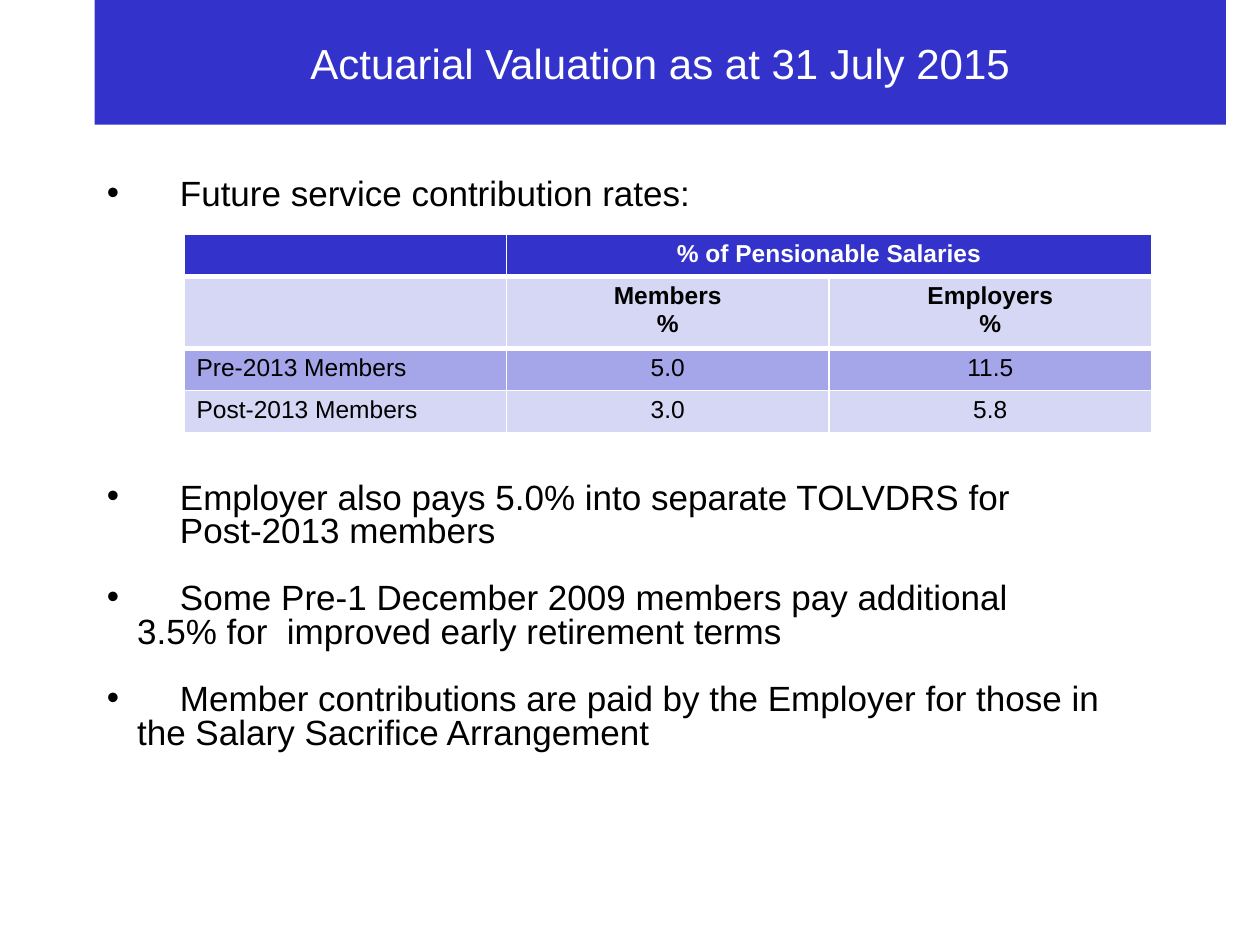
"""Build the actuarial valuation slide with its contribution rate table."""
from lxml.etree import SubElement
from pptx import Presentation
from pptx.dml.color import RGBColor
from pptx.enum.text import MSO_ANCHOR as Anchor, PP_ALIGN as Align
from pptx.oxml.ns import qn
from pptx.util import Inches, Pt

BLUE, MIDDLE, PALE = "3333CC", "A5A5E9", "D6D6F5"
WHITE, BLACK = "FFFFFF", "000000"


def paint(fill, color):
    fill.solid()
    fill.fore_color.rgb = RGBColor.from_string(color)


def add_span(para, text, size, color, bold=False):
    span = para.add_run()
    span.text = text
    span.font.name = "Arial"
    span.font.size = Pt(size)
    span.font.bold = bold
    paint(span.font.fill, color)


deck = Presentation()
deck.slide_width, deck.slide_height = Inches(10), Inches(7.5)
page = deck.slides.add_slide(deck.slide_layouts[5])

title = page.shapes.title
title.left, title.top = Inches(0.75), Inches(0)
title.width, title.height = Inches(8.98), Inches(0.99)
paint(title.fill, BLUE)
title.text_frame.vertical_anchor = Anchor.MIDDLE
title_para = title.text_frame.paragraphs[0]
title_para.alignment = Align.CENTER
add_span(title_para, "Actuarial Valuation as at 31 July 2015", 24, WHITE)

points = [
    (0, True, ["\tFuture service contribution rates:"]),
    (154, True, ["\tEmployer also pays 5.0% into separate TOLVDRS for"]),
    (0, False, ["Post-2013 members"]),
    (19.2, True, ["\tSome Pre-1 December 2009 members pay additional",
                  "3.5% for  improved early retirement terms"]),
    (19.2, True, ["\tMember contributions are paid by the Employer for those in",
                  "the Salary Sacrifice Arrangement"]),
]
box = page.shapes.add_textbox(Inches(0.75), Inches(1.38), Inches(8.5), Inches(5.32))
frame = box.text_frame
frame.word_wrap = True
for index, (gap, bulleted, lines) in enumerate(points):
    para = frame.add_paragraph() if index else frame.paragraphs[0]
    para.line_spacing = 0.8
    para.space_before = Pt(gap)
    properties = para._p.get_or_add_pPr()
    properties.set("marL", str(Inches(0.24 if bulleted else 0.58)))
    properties.set("indent", str(Inches(-0.24 if bulleted else 0)))
    if bulleted:
        SubElement(properties, qn("a:buFont"), typeface="Arial")
        SubElement(properties, qn("a:buChar"), char="•")
        tabs = SubElement(properties, qn("a:tabLst"))
        SubElement(tabs, qn("a:tab"), pos=str(Inches(0.58)), algn="l")
    else:
        SubElement(properties, qn("a:buNone"))
    for number, line in enumerate(lines):
        if number:
            para.add_line_break()
        add_span(para, line, 20, BLACK)

rows = [
    (0.33, BLUE, WHITE, True, ["", "% of Pensionable Salaries", ""]),
    (0.57, PALE, BLACK, True, ["", "Members\n%", "Employers\n%"]),
    (0.33, MIDDLE, BLACK, False, ["Pre-2013 Members", "5.0", "11.5"]),
    (0.33, PALE, BLACK, False, ["Post-2013 Members", "3.0", "5.8"]),
]
table = page.shapes.add_table(
    len(rows), 3, Inches(1.46), Inches(1.86), Inches(7.68), Inches(1.56)).table
table.horz_banding = False
for column in table.columns:
    column.width = Inches(2.56)
for row_index, (height, fill, color, bold, texts) in enumerate(rows):
    table.rows[row_index].height = Inches(height)
    for column_index, text in enumerate(texts):
        cell = table.cell(row_index, column_index)
        if row_index < 2:
            side = "a:lnT" if row_index else "a:lnB"
            border = SubElement(cell._tc.get_or_add_tcPr(), qn(side), w=str(Pt(3)))
            SubElement(SubElement(border, qn("a:solidFill")), qn("a:srgbClr"), val=WHITE)
        paint(cell.fill, fill)
        for number, line in enumerate(text.split("\n")):
            para = cell.text_frame.add_paragraph() if number else cell.text_frame.paragraphs[0]
            para.alignment = Align.CENTER if column_index else Align.LEFT
            if line:
                add_span(para, line, 14, color, bold)
            else:
                SubElement(para._p, qn("a:endParaRPr"), sz="1400")
table.cell(0, 1).merge(table.cell(0, 2))

deck.save("out.pptx")
